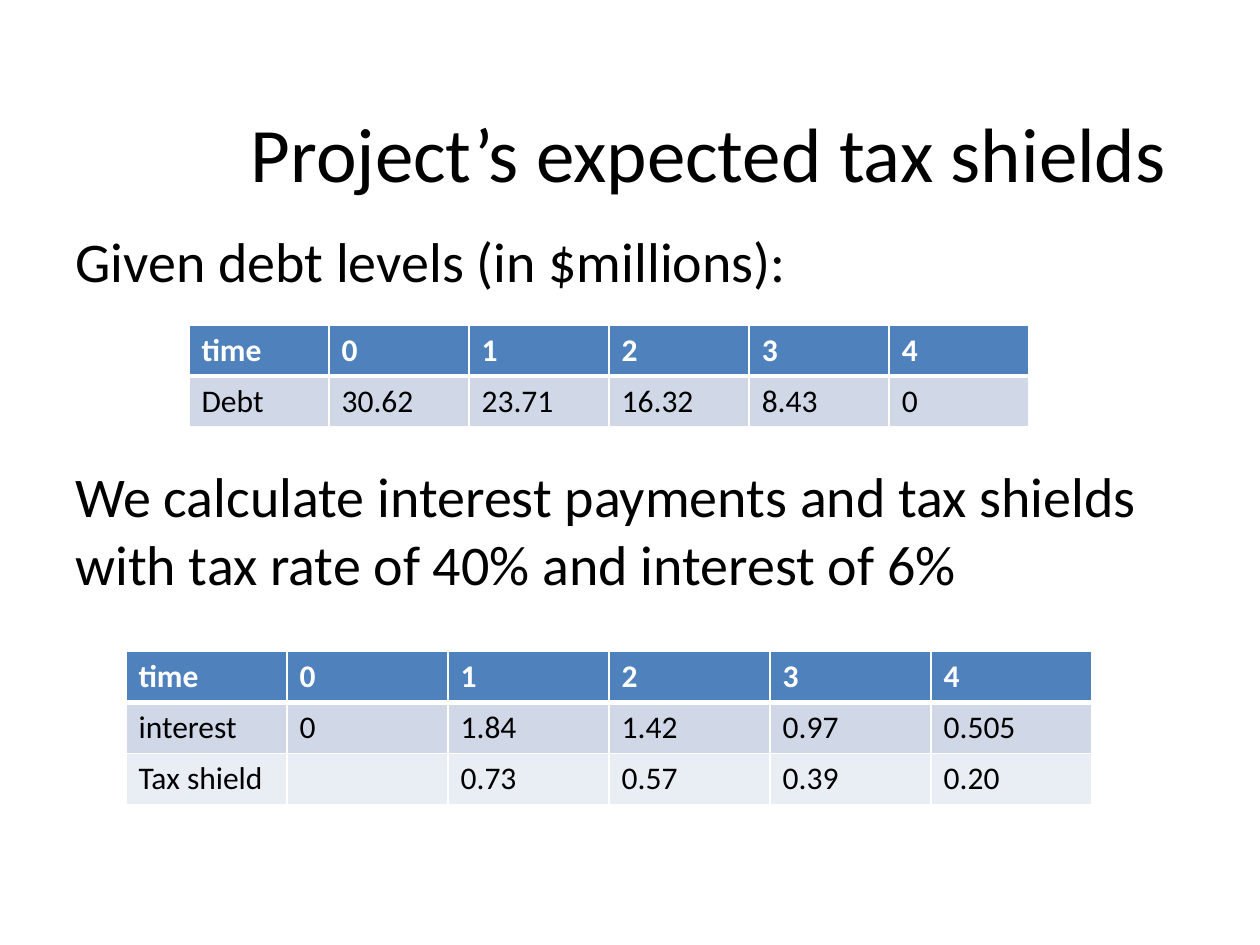
from lxml import etree
from pptx import Presentation
from pptx.dml.color import RGBColor
from pptx.enum.text import MSO_ANCHOR, PP_ALIGN
from pptx.oxml.ns import qn
from pptx.util import Inches, Pt

CENTER, LEFT = PP_ALIGN.CENTER, PP_ALIGN.LEFT
TOP, MIDDLE = MSO_ANCHOR.TOP, MSO_ANCHOR.MIDDLE

FONT = "Calibri"
COLORS = {
    "text": "000000",
    "header_text": "FFFFFF",
    "border": "FFFFFF",
    "header": "4F81BD",
    "odd_row": "D0D8E8",
    "even_row": "E9EDF4",
}
ROW_HEIGHT = 0.405

TITLE = "Project’s expected tax shields"
# Text and space before it in points; the second gap leaves room for the debt table
BODY = [
    ("Given debt levels (in $millions):", 6),
    ("We calculate interest payments and tax shields "
     "with tax rate of 40% and interest of 6%", 96),
]
TABLES = [
    {"left": 1.5, "top": 2.58, "width": 6.67, "rows": [
        ["time", "0", "1", "2", "3", "4"],
        ["Debt", "30.62", "23.71", "16.32", "8.43", "0"],
    ]},
    {"left": 1, "top": 5.17, "width": 7.67, "rows": [
        ["time", "0", "1", "2", "3", "4"],
        ["interest", "0", "1.84", "1.42", "0.97", "0.505"],
        ["Tax shield", "", "0.73", "0.57", "0.39", "0.20"],
    ]},
]


def write(para, text, size=18, color="text", bold=False, align=LEFT, before=0):
    para.alignment = align
    para.space_before = Pt(before)
    para.font.size = Pt(size)
    if text:
        span = para.add_run()
        span.text = text
        span.font.name = FONT
        span.font.size = Pt(size)
        span.font.bold = bold
        span.font.color.rgb = RGBColor.from_string(COLORS[color])


def add_box(slide, left, top, width, height, anchor=TOP):
    box = slide.shapes.add_textbox(*map(Inches, (left, top, width, height)))
    box.text_frame.word_wrap = True
    box.text_frame.vertical_anchor = anchor
    return box.text_frame


def set_borders(cell, widths):
    """Draw cell borders; widths maps the sides L, R, T, B to points."""
    properties = cell._tc.get_or_add_tcPr()
    for index, (side, width) in enumerate(widths.items()):
        line = etree.Element(qn(f"a:ln{side}"), w=str(Pt(width)))
        fill = etree.SubElement(line, qn("a:solidFill"))
        etree.SubElement(fill, qn("a:srgbClr"), val=COLORS["border"])
        properties.insert(index, line)


def add_banded_table(slide, left, top, width, rows):
    row_count, column_count = len(rows), len(rows[0])
    table = slide.shapes.add_table(
        row_count, column_count, Inches(left), Inches(top),
        Inches(width), Inches(ROW_HEIGHT * row_count)).table
    for column in table.columns:
        column.width = Inches(width / column_count)
    for r, values in enumerate(rows):
        is_header = r == 0
        band = "header" if is_header else "odd_row" if r % 2 else "even_row"
        borders = {"L": 1, "R": 1, "T": 3 if r == 1 else 1, "B": 3 if is_header else 1}
        for c, value in enumerate(values):
            cell = table.cell(r, c)
            cell.fill.solid()
            cell.fill.fore_color.rgb = RGBColor.from_string(COLORS[band])
            set_borders(cell, borders)
            write(cell.text_frame.paragraphs[0], value, bold=is_header,
                  color="header_text" if is_header else "text")


def main():
    deck = Presentation()
    deck.slide_width, deck.slide_height = Inches(10), Inches(7.5)
    slide = deck.slides.add_slide(deck.slide_layouts[6])

    title = add_box(slide, 1.75, 0.58, 7.75, 1.25, anchor=MIDDLE)
    write(title.paragraphs[0], TITLE, size=44, align=CENTER)

    body = add_box(slide, 0.5, 1.75, 9, 5.17)
    for index, (text, before) in enumerate(BODY):
        para = body.add_paragraph() if index else body.paragraphs[0]
        write(para, text, size=32, before=before)

    for table in TABLES:
        add_banded_table(slide, **table)
    deck.save("out.pptx")


if __name__ == "__main__":
    main()
